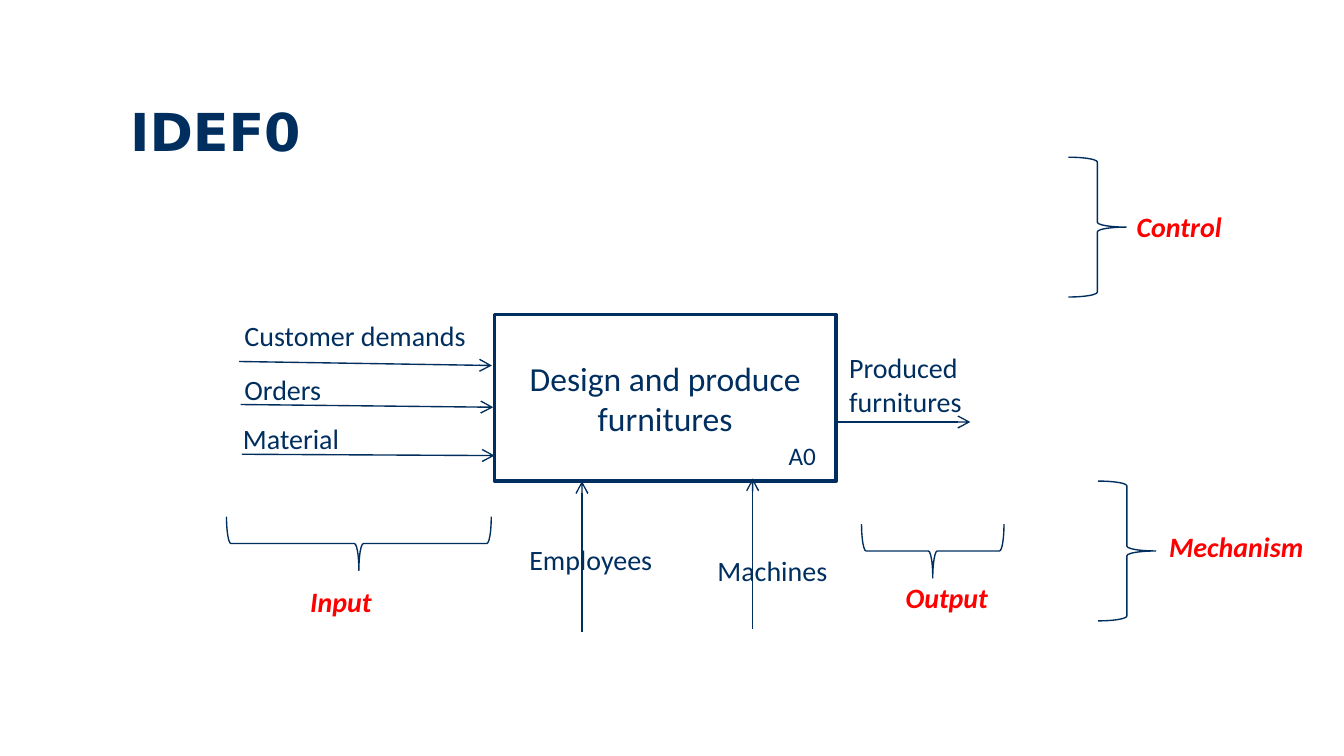
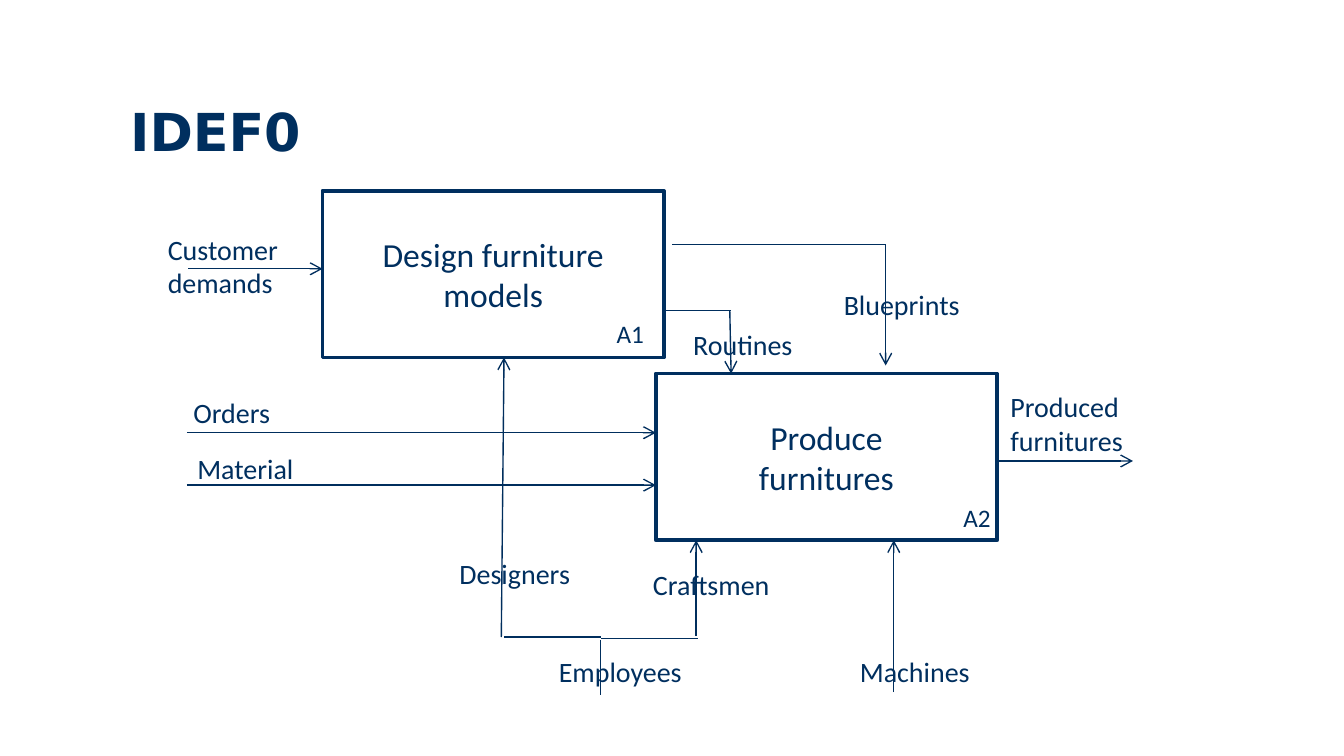
from lxml import etree
from pptx import Presentation
from pptx.dml.color import RGBColor
from pptx.enum.shapes import MSO_CONNECTOR, MSO_SHAPE
from pptx.enum.text import MSO_ANCHOR, MSO_AUTO_SIZE, PP_ALIGN
from pptx.oxml.ns import qn
from pptx.util import Inches, Pt

STRAIGHT = MSO_CONNECTOR.STRAIGHT
RECT, BRACE = MSO_SHAPE.RECTANGLE, MSO_SHAPE.RIGHT_BRACE
MIDDLE, TOP = MSO_ANCHOR.MIDDLE, MSO_ANCHOR.TOP
CENTER, LEFT = PP_ALIGN.CENTER, PP_ALIGN.LEFT
GROW, FIXED = MSO_AUTO_SIZE.SHAPE_TO_FIT_TEXT, MSO_AUTO_SIZE.NONE

COLORS = {"navy": "002F5F", "line": "002E5D", "white": "FFFFFF", "red": "FF0000"}
BODY_FONT, TITLE_FONT = "Calibri", "DejaVu Sans"
SLIDE_W = 10
TITLE_FRAME = (0.87, 0.69, 7.49, 0.65)
BOX_W, BOX_H = 2.54, 1.24
LABEL_H, TWO_LINE_H = 0.35, 0.61
TAG_W, TAG_H = 0.59, 0.33

# activities: paragraphs, left, top, tag, tag left, tag top
# arrows and lines: x1, y1, x2, y2
# labels and roles: text, left, top, width, height
# braces: left, top, width, height, rotation
SLIDES = [
    {
        "title": "IDEF0",
        "activities": [(["Design and produce furnitures"], 3.68, 2.34, "A0", 5.77, 3.23)],
        "arrows": [
            (1.78, 2.69, 3.66, 2.72),
            (1.79, 3.01, 3.67, 3.03),
            (1.8, 3.38, 3.68, 3.39),
            (6.22, 3.14, 7.22, 3.14),
            (4.33, 4.7, 4.33, 3.58),
            (5.6, 4.68, 5.6, 3.56),
        ],
        "lines": [],
        "labels": [
            ("Customer demands", 1.72, 2.32, 1.91, LABEL_H),
            ("Orders", 1.72, 2.72, 1.19, LABEL_H),
            ("Material", 1.71, 3.09, 1, LABEL_H),
            ("Produced furnitures", 6.22, 2.56, 1.3, TWO_LINE_H),
            ("Employees", 3.84, 3.99, 1.14, LABEL_H),
            ("Machines", 5.24, 4.07, 1.06, LABEL_H),
        ],
        "braces": [
            (8.17, 3.58, 0.43, 1.04, 0),
            (7.95, 1.17, 0.43, 1.04, 0),
            (2.47, 3.06, 0.4, 1.97, 90),
            (6.74, 3.57, 0.4, 1.06, 90),
        ],
        "roles": [
            ("Input", 2.21, 4.3, 1.14, LABEL_H),
            ("Output", 6.64, 4.27, 1.14, LABEL_H),
            ("Mechanism", 8.6, 3.89, 1.2, LABEL_H),
            ("Control", 8.36, 1.51, 1.2, LABEL_H),
        ],
    },
    {
        "title": "IDEF0",
        "activities": [
            (["Design furniture models"], 2.4, 1.42, "A1", 4.49, 2.32),
            (["Produce", "furnitures"], 4.88, 2.78, "A2", 7.07, 3.69),
        ],
        "arrows": [
            (1.4, 2, 2.4, 2),
            (1.39, 3.22, 4.88, 3.22),
            (1.39, 3.61, 4.88, 3.61),
            (7.42, 3.43, 8.43, 3.43),
            (5.43, 2.31, 5.44, 2.78),
            (6.59, 1.82, 6.59, 2.72),
            (3.73, 4.74, 3.75, 2.66),
            (5.18, 4.73, 5.18, 4.02),
            (6.65, 5.15, 6.65, 4.02),
        ],
        "lines": [
            (5, 1.82, 6.59, 1.82),
            (4.94, 2.31, 5.44, 2.31),
            (5.19, 4.75, 4.47, 4.75),
            (4.47, 4.74, 3.75, 4.74),
            (4.47, 4.76, 4.47, 5.17),
        ],
        "labels": [
            ("Customer demands", 1.15, 1.68, 1.48, TWO_LINE_H),
            ("Orders", 1.34, 2.89, 1.19, LABEL_H),
            ("Material", 1.37, 3.31, 1, LABEL_H),
            ("Produced furnitures", 7.42, 2.85, 1.3, TWO_LINE_H),
            ("Routines", 5.06, 2.39, 1, LABEL_H),
            ("Blueprints", 6.18, 2.09, 2.54, LABEL_H),
            ("Designers", 3.32, 4.09, 1.18, LABEL_H),
            ("Craftsmen", 4.76, 4.17, 1.42, LABEL_H),
            ("Employees", 4.06, 4.82, 1.14, LABEL_H),
            ("Machines", 6.3, 4.82, 1.06, LABEL_H),
        ],
        "braces": [],
        "roles": [],
    },
]


def rgb(name):
    return RGBColor.from_string(COLORS[name])


def write(tf, paragraphs, size, font=BODY_FONT, color="navy", bold=False,
          italic=False, align=LEFT, anchor=TOP, spacing=1.0):
    tf.word_wrap = True
    tf.vertical_anchor = anchor
    for i, text in enumerate(paragraphs):
        p = tf.paragraphs[0] if i == 0 else tf.add_paragraph()
        p.alignment, p.line_spacing = align, spacing
        r = p.add_run()
        r.text = text
        r.font.name, r.font.size = font, Pt(size)
        r.font.bold, r.font.italic = bold, italic
        r.font.color.rgb = rgb(color)


def add_text(slide, text, frame, size, fit=GROW, **style):
    tf = slide.shapes.add_textbox(*map(Inches, frame)).text_frame
    write(tf, [text], size, **style)
    tf.auto_size = fit


def add_outline(slide, kind, frame, width):
    sp = slide.shapes.add_shape(kind, *map(Inches, frame))
    sp.shadow.inherit = False
    sp.line.color.rgb = rgb("navy")
    sp.line.width = Pt(width)
    return sp


def add_activity(slide, paragraphs, left, top, tag, tag_left, tag_top):
    sp = add_outline(slide, RECT, (left, top, BOX_W, BOX_H), 2)
    sp.fill.solid()
    sp.fill.fore_color.rgb = rgb("white")
    write(sp.text_frame, paragraphs, 18, align=CENTER, anchor=MIDDLE)
    add_text(slide, tag, (tag_left, tag_top, TAG_W, TAG_H), 13.5)


def add_line(slide, points, arrow):
    line = slide.shapes.add_connector(STRAIGHT, *map(Inches, points))
    line.line.color.rgb = rgb("line")
    line.line.width = Pt(0.75)
    if arrow:
        etree.SubElement(line.line._get_or_add_ln(), qn("a:tailEnd"), type="arrow")
    etree.SubElement(line._element.spPr, qn("a:effectLst"))


def add_brace(slide, left, top, width, height, rotation):
    sp = add_outline(slide, BRACE, (left, top, width, height), 0.75)
    sp.fill.background()
    sp.rotation = rotation


def build_slide(prs, content):
    slide = prs.slides.add_slide(prs.slide_layouts[6])
    add_text(slide, content["title"], TITLE_FRAME, 28, fit=FIXED,
             font=TITLE_FONT, bold=True, anchor=MIDDLE, spacing=0.8)
    for activity in content["activities"]:
        add_activity(slide, *activity)
    for points in content["lines"]:
        add_line(slide, points, arrow=False)
    for points in content["arrows"]:
        add_line(slide, points, arrow=True)
    for brace in content["braces"]:
        add_brace(slide, *brace)
    for text, *frame in content["labels"]:
        add_text(slide, text, frame, 15)
    for text, *frame in content["roles"]:
        add_text(slide, text, frame, 15, color="red", bold=True, italic=True)


def main():
    prs = Presentation()
    prs.slide_width = Inches(SLIDE_W)
    prs.slide_height = Inches(SLIDE_W * 9 / 16)
    for content in SLIDES:
        build_slide(prs, content)
    prs.save("out.pptx")


if __name__ == "__main__":
    main()
